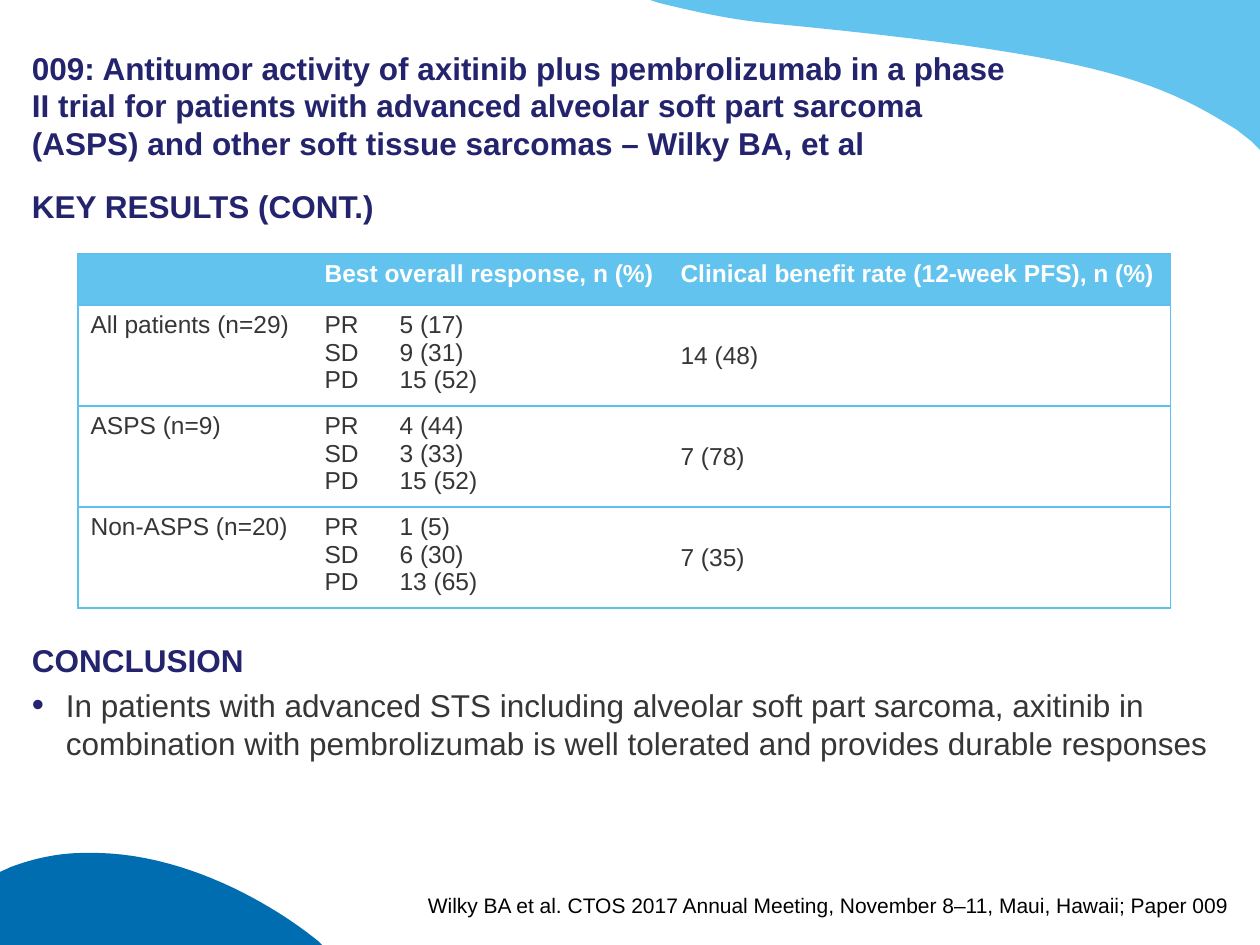
"""Build the axitinib plus pembrolizumab key results slide."""
import pptx
import pptx.dml.color
import pptx.enum.text
import pptx.oxml
import pptx.oxml.ns
import pptx.util

RGB = pptx.dml.color.RGBColor
ALIGN = pptx.enum.text.PP_ALIGN
ANCHOR = pptx.enum.text.MSO_ANCHOR
NAVY = RGB(0x23, 0x24, 0x6D)
GREY = RGB(0x36, 0x36, 0x36)
SKY = RGB(0x62, 0xC4, 0xEE)
BLUE = RGB(0x00, 0x6D, 0xB0)
RULE = RGB(0x5C, 0xC1, 0xEC)
WHITE = RGB(0xFF, 0xFF, 0xFF)
BLACK = RGB(0x00, 0x00, 0x00)
FONT = "Arial"
SCALE = 914400 / 126

TITLE = ("009: Antitumor activity of axitinib plus pembrolizumab in a phase II trial for patients "
         "with advanced alveolar soft part sarcoma (ASPS) and other soft tissue sarcomas – Wilky BA, et al")
RESULTS = "KEY RESULTS (CONT.)"
CONCLUSION = "CONCLUSION"
FINDING = ("In patients with advanced STS including alveolar soft part sarcoma, axitinib in "
           "combination with pembrolizumab is well tolerated and provides durable responses")
SOURCE = "Wilky BA et al. CTOS 2017 Annual Meeting, November 8–11, Maui, Hawaii; Paper 009"

HEADERS = ["", "Best overall response, n (%)", "Clinical benefit rate (12-week PFS), n (%)"]
RESPONSES = ["PR", "SD", "PD"]
GROUPS = [
    ("All patients (n=29)", ["5 (17)", "9 (31)", "15 (52)"], "14 (48)"),
    ("ASPS (n=9)", ["4 (44)", "3 (33)", "15 (52)"], "7 (78)"),
    ("Non-ASPS (n=20)", ["1 (5)", "6 (30)", "13 (65)"], "7 (35)"),
]
TABLE_LEFT, TABLE_TOP = 78, 254
COLUMNS = [234, 356, 503]
HEADER_HEIGHT, GROUP_HEIGHT = 51, 101
TAB_STOP = 75

TOP_WAVE = [
    [(650, 0)], [(1260, 0)], [(1260, 150)], [(1251, 141)],
    [(1246, 137), (1242, 134), (1237, 130)],
    [(1155, 78), (1089, 54), (766, 23)],
    [(727, 19), (692, 11), (659, 3)],
]
BOTTOM_WAVE = [
    [(84, 853)], [(183, 850), (275, 906), (318, 941)], [(322, 945)],
    [(0, 945)], [(0, 872)], [(11, 867)], [(35, 858), (60, 853), (84, 853)],
]


def emu(px):
    return pptx.util.Emu(round(px * SCALE))


def outline(segments, steps=24):
    points = []
    for segment in segments:
        if len(segment) == 1:
            points += segment
            continue
        curve = [points[-1]] + segment
        for i in range(1, steps + 1):
            t = i / steps
            weights = [(1 - t) ** 3, 3 * t * (1 - t) ** 2, 3 * t * t * (1 - t), t ** 3]
            points.append(tuple(sum(w * c[axis] for w, c in zip(weights, curve)) for axis in (0, 1)))
    return [(emu(x), emu(y)) for x, y in points]


def add_wave(s, segments, color):
    start, *rest = outline(segments)
    builder = s.shapes.build_freeform(*start, scale=1.0)
    builder.add_line_segments(rest, close=True)
    sp = builder.convert_to_shape()
    sp.shadow.inherit = False
    sp.fill.solid()
    sp.fill.fore_color.rgb = color
    sp.line.fill.background()


def add_box(s, left, top, width, height, margins, anchor):
    tf = s.shapes.add_textbox(emu(left), emu(top), emu(width), emu(height)).text_frame
    tf.word_wrap = True
    tf.vertical_anchor = anchor
    tf.margin_left = tf.margin_right = 0
    tf.margin_top, tf.margin_bottom = map(emu, margins)
    return tf


def add_xml(parent, xml):
    ns = pptx.oxml.ns.nsdecls("a")
    parent.append(pptx.oxml.parse_xml(xml.replace(">", f" {ns}>", 1) if "/>" not in xml.split(">")[0] + ">"
                                      else xml.replace("/>", f" {ns}/>", 1)))


def write(tf, text, size=18, color=NAVY, bold=False, align=ALIGN.LEFT, before=0, after=0,
          bullet=False, tab=None):
    p = tf.paragraphs[-1]
    if p.runs:
        p = tf.add_paragraph()
    p.alignment = align
    p.space_before, p.space_after = pptx.util.Pt(before), pptx.util.Pt(after)
    pPr = p._p.get_or_add_pPr()
    if bullet:
        pPr.set("marL", str(emu(34)))
        pPr.set("indent", str(emu(-34)))
        add_xml(pPr, f'<a:buClr><a:srgbClr val="{NAVY}"/></a:buClr>')
        add_xml(pPr, '<a:buSzPct val="110000"/>')
        add_xml(pPr, f'<a:buFont typeface="{FONT}"/>')
        add_xml(pPr, '<a:buChar char="•"/>')
    if tab:
        add_xml(pPr, f'<a:tabLst><a:tab pos="{emu(tab)}" algn="l"/></a:tabLst>')
    r = p.add_run()
    r.text = text
    r.font.name, r.font.size, r.font.bold = FONT, pptx.util.Pt(size), bold
    r.font.color.rgb = color


def set_borders(cell, col):
    tcPr = cell._tc.get_or_add_tcPr()
    shown = {"L": col == 0, "R": col == len(COLUMNS) - 1, "T": True, "B": True}
    for side, visible in shown.items():
        paint = f'<a:solidFill><a:srgbClr val="{RULE}"/></a:solidFill>' if visible else "<a:noFill/>"
        add_xml(tcPr, f'<a:ln{side} w="9525">{paint}</a:ln{side}>')


def add_results_table(s):
    heights = [HEADER_HEIGHT] + [GROUP_HEIGHT] * len(GROUPS)
    frame = s.shapes.add_table(len(heights), len(COLUMNS), emu(TABLE_LEFT), emu(TABLE_TOP),
                               emu(sum(COLUMNS)), emu(sum(heights)))
    table = frame.table
    table.horz_banding = False
    for column, width in zip(table.columns, COLUMNS):
        column.width = emu(width)
    for row, height in zip(table.rows, heights):
        row.height = emu(height)
    rows = [[[h] if h else [] for h in HEADERS]]
    for group, counts, benefit in GROUPS:
        rows.append([[group], [f"{k}\t{n}" for k, n in zip(RESPONSES, counts)], [benefit]])
    for i, row in enumerate(rows):
        for j, lines in enumerate(row):
            cell = table.cell(i, j)
            set_borders(cell, j)
            if i == 0:
                cell.fill.solid()
                cell.fill.fore_color.rgb = SKY
            else:
                cell.fill.background()
            cell.vertical_anchor = ANCHOR.MIDDLE if i and j == 2 else ANCHOR.TOP
            for line in lines:
                write(cell.text_frame, line, size=14, color=GREY if i else WHITE, bold=i == 0,
                      tab=TAB_STOP if "\t" in line else None)


def main():
    prs = pptx.Presentation()
    prs.slide_width, prs.slide_height = emu(1260), emu(945)
    s = prs.slides.add_slide(prs.slide_layouts[6])
    add_wave(s, TOP_WAVE, SKY)
    add_wave(s, BOTTOM_WAVE, BLUE)
    write(add_box(s, 32, 32, 983, 130, (6, 0), ANCHOR.BOTTOM), TITLE, bold=True)
    body = add_box(s, 32, 181, 1197, 732, (6, 6), ANCHOR.TOP)
    write(body, RESULTS, bold=True, after=4)
    write(body, CONCLUSION, bold=True, before=234, after=4)
    write(body, FINDING, color=GREY, after=4, bullet=True)
    source = add_box(s, 422, 893, 807, 25, (0, 0), ANCHOR.BOTTOM)
    write(source, SOURCE, size=12, color=BLACK, align=ALIGN.RIGHT)
    add_results_table(s)
    prs.save("out.pptx")


if __name__ == "__main__":
    main()
